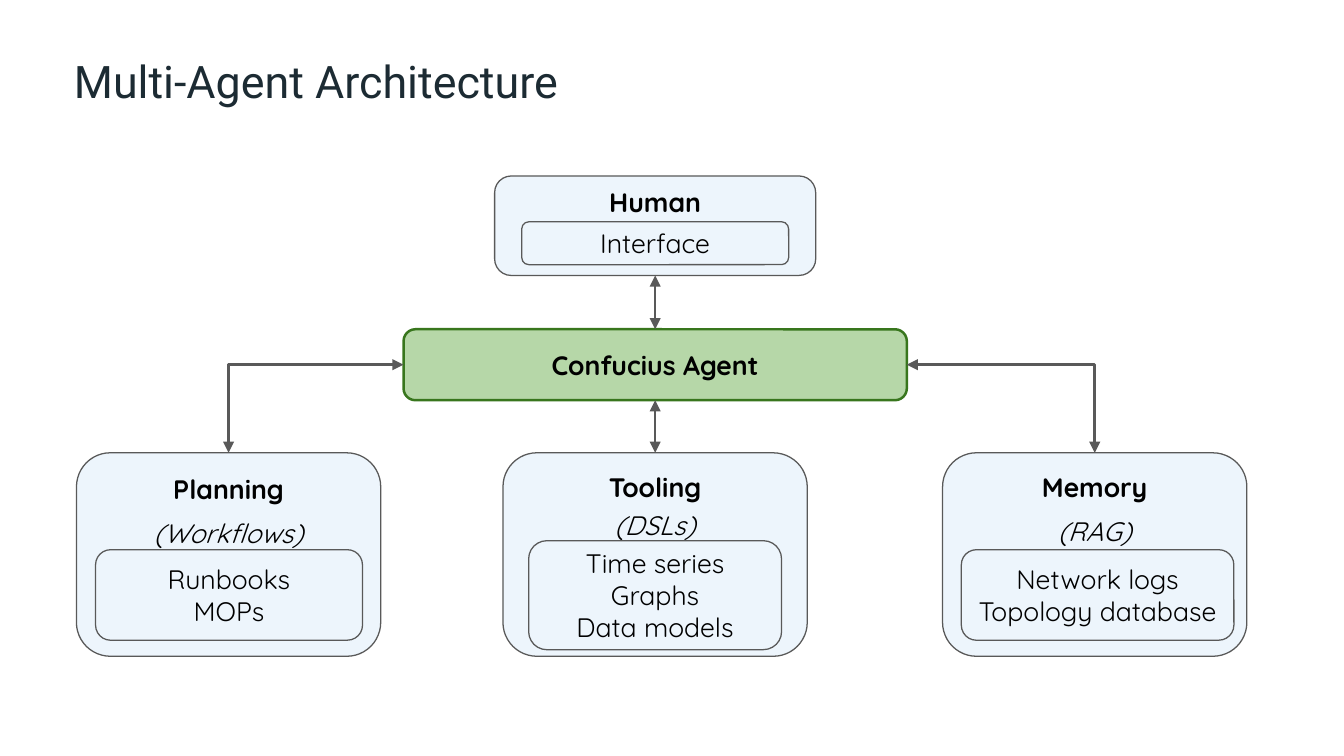
from dataclasses import dataclass

from pptx import Presentation
from pptx.dml.color import RGBColor
from pptx.enum import shapes as kinds, text as modes
from pptx.oxml import ns
from pptx.oxml.xmlchemy import OxmlElement
from pptx.shapes.autoshape import Shape
from pptx.slide import Slide
from pptx.text.text import TextFrame
from pptx.util import Pt


@dataclass(frozen=True)
class Theme:
    ink: str = "000000"
    head: str = "1C2B33"
    card: str = "EDF5FC"
    edge: str = "595959"
    hub: str = "B6D7A8"
    rim: str = "38761D"
    body: str = "Quicksand"
    face: str = "Roboto"
    large: float = 24
    small: float = 14.3
    thin: float = 0.67
    thick: float = 1.34


@dataclass(frozen=True)
class Box:
    left: float
    top: float
    width: float
    height: float


@dataclass(frozen=True)
class Card:
    name: str
    box: Box
    inner: Box
    items: tuple[str, ...]
    inset: float
    note: str = ""
    gap: float = 0


LOOK = Theme()
TOP, LEFT, BOTTOM, RIGHT = range(4)  # connection sites of a rounded box
AXIS = 351
ROW, WIDE, TALL = 242.6, 163, 109


def centred(top: float, width: float, height: float) -> Box:
    return Box(AXIS - width / 2, top, width, height)


HUMAN = Card("Human", centred(94.3, 172, 53.3), centred(118.8, 143, 23),
             ("Interface",), 2.8)
PLAN = Card("Planning", Box(41, ROW, WIDE, TALL), Box(51.2, 294.5, 143, 48.5),
            ("Runbooks", "MOPs"), 5.4, "(Workflows)", 6.5)
TOOLS = Card("Tooling", centred(ROW, WIDE, TALL), centred(289.7, 135.5, 58.4),
             ("Time series", "Graphs", "Data models"), 4.5, "(DSLs)", 3)
MEMORY = Card("Memory", Box(505, ROW, WIDE, TALL), Box(515, 294.5, 146, 48.5),
              ("Network logs", "Topology database"), 4.5, "(RAG)", 6.5)


def write(frame: TextFrame, words: str, *, size: float = LOOK.small,
          font: str = LOOK.body, color: str = LOOK.ink, bold: bool = False,
          italic: bool = False, before: float = 0, spacing: float = 1,
          align: modes.PP_ALIGN = modes.PP_ALIGN.CENTER) -> None:
    """Add one paragraph, filling the first one if it is still empty."""
    first = frame.paragraphs[0]
    para = frame.add_paragraph() if first.text else first
    para.alignment, para.line_spacing = align, spacing
    para.space_before = Pt(before)
    run = para.add_run()
    run.text = words
    run.font.name, run.font.size = font, Pt(size)
    run.font.bold, run.font.italic = bold, italic
    run.font.color.rgb = RGBColor.from_string(color)


def place(shape: Shape, box: Box) -> None:
    shape.left, shape.top = Pt(box.left), Pt(box.top)
    shape.width, shape.height = Pt(box.width), Pt(box.height)


def setup(frame: TextFrame, anchor: modes.MSO_ANCHOR, inset: float = 0) -> None:
    frame.word_wrap, frame.auto_size = True, modes.MSO_AUTO_SIZE.NONE
    frame.margin_left = frame.margin_right = frame.margin_bottom = 0
    frame.margin_top, frame.vertical_anchor = Pt(inset), anchor


def panel(slide: Slide, box: Box, fill: str | None = None,
          line: str = LOOK.edge, weight: float = LOOK.thin) -> Shape:
    shape = slide.shapes.add_shape(kinds.MSO_SHAPE.ROUNDED_RECTANGLE, 0, 0, 0, 0)
    place(shape, box)
    shape.shadow.inherit = False
    if fill:
        shape.fill.solid()
        shape.fill.fore_color.rgb = RGBColor.from_string(fill)
    else:
        shape.fill.background()
    shape.line.color.rgb = RGBColor.from_string(line)
    shape.line.width = Pt(weight)
    setup(shape.text_frame, modes.MSO_ANCHOR.MIDDLE)
    return shape


def draw(slide: Slide, card: Card) -> Shape:
    """Draw a card with its heading and the list box inside it."""
    outer = panel(slide, card.box, LOOK.card)
    setup(outer.text_frame, modes.MSO_ANCHOR.TOP, card.inset)
    write(outer.text_frame, card.name, bold=True)
    if card.note:
        write(outer.text_frame, card.note, italic=True, before=card.gap)
    inner = panel(slide, card.inner)
    for item in card.items:
        write(inner.text_frame, item)
    return outer


def link(slide: Slide, start: Shape, out: int, end: Shape, bent: bool = False) -> None:
    """Join a side of one box to the top of another, with two arrowheads."""
    kind = kinds.MSO_CONNECTOR.ELBOW if bent else kinds.MSO_CONNECTOR.STRAIGHT
    wire = slide.shapes.add_connector(kind, 0, 0, 0, 0)
    wire.begin_connect(start, out)
    wire.end_connect(end, TOP)
    wire.line.color.rgb = RGBColor.from_string(LOOK.edge)
    wire.line.width = Pt(LOOK.thick)
    props = wire._element.spPr
    if bent:  # a single corner
        props.find(ns.qn("a:prstGeom")).set("prst", "bentConnector2")
    for tag in ("a:headEnd", "a:tailEnd"):
        tip = OxmlElement(tag)
        tip.set("type", "triangle")
        props.find(ns.qn("a:ln")).append(tip)
    props.append(OxmlElement("a:effectLst"))


def main() -> None:
    deck = Presentation()
    deck.slide_width, deck.slide_height = Pt(720), Pt(405)
    slide = deck.slides.add_slide(deck.slide_layouts[5])

    # Title
    title = slide.shapes.title
    place(title, Box(39.6, 24.5, 582, 33))
    setup(title.text_frame, modes.MSO_ANCHOR.MIDDLE)
    write(title.text_frame, "Multi-Agent Architecture", size=LOOK.large,
          font=LOOK.face, color=LOOK.head, spacing=1.15,
          align=modes.PP_ALIGN.LEFT)

    # Agent in the centre
    agent = panel(slide, centred(176.4, 269.6, 38), LOOK.hub, LOOK.rim, LOOK.thick)
    write(agent.text_frame, "Confucius Agent", bold=True)

    # Cards around it
    human, plan, tools, memory = (
        draw(slide, card) for card in (HUMAN, PLAN, TOOLS, MEMORY))

    # Arrows
    link(slide, human, BOTTOM, agent)
    link(slide, agent, BOTTOM, tools)
    link(slide, agent, LEFT, plan, bent=True)
    link(slide, agent, RIGHT, memory, bent=True)

    deck.save("out.pptx")


if __name__ == "__main__":
    main()
